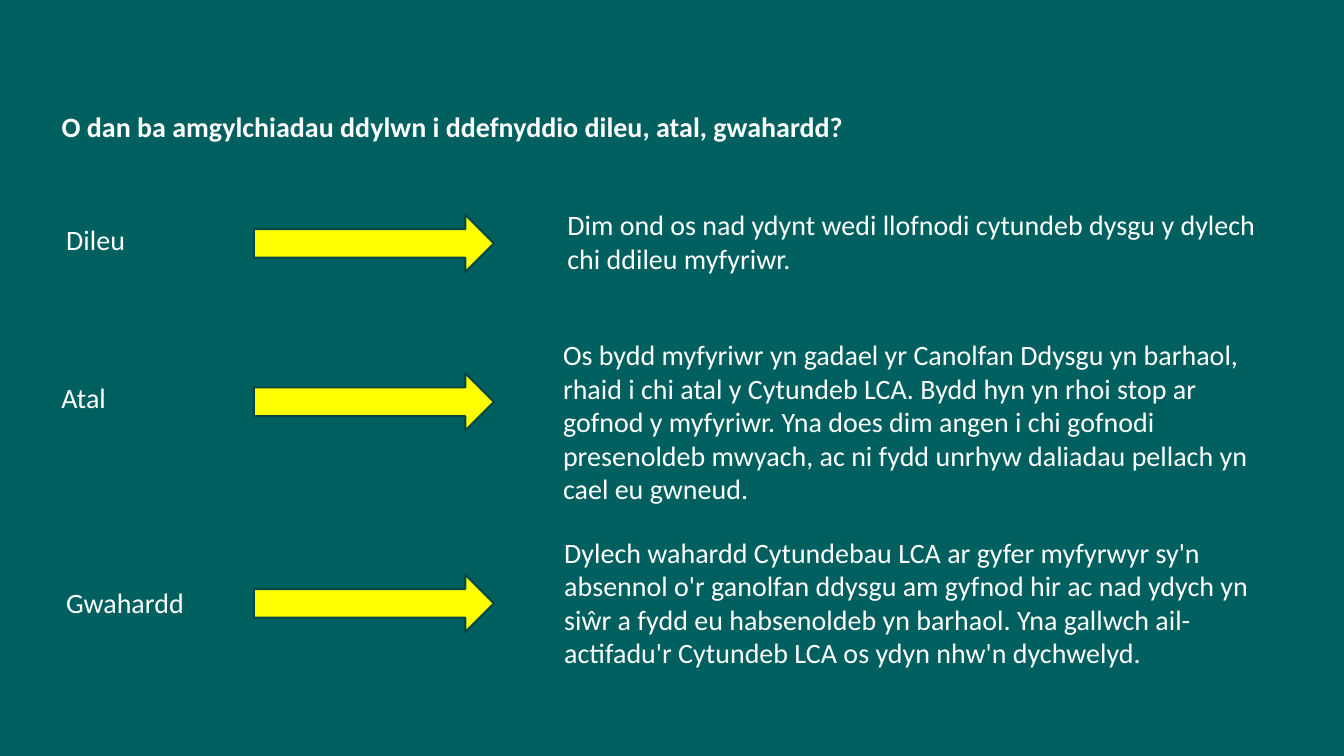
from pptx import Presentation
from pptx.dml.color import RGBColor
from pptx.enum.shapes import MSO_SHAPE
from pptx.enum.text import MSO_ANCHOR, MSO_AUTO_SIZE, PP_ALIGN
from pptx.util import Cm, Pt

RIGHT_ARROW = MSO_SHAPE.RIGHT_ARROW
TOP = MSO_ANCHOR.TOP
FIT_SHAPE = MSO_AUTO_SIZE.SHAPE_TO_FIT_TEXT
LEFT = PP_ALIGN.LEFT
TITLE_ONLY = 5

COLOURS = {
    "background": "006060",
    "text": "FFFFFF",
    "arrow": "FFFF00",
    "outline": "004747",
}

HEADING = "O dan ba amgylchiadau ddylwn i ddefnyddio dileu, atal, gwahardd?"

# Each row: label and its box, arrow top, explanation and its box (cm).
ROWS = [
    ("Dileu", (1.42, 5.49, 4.98, 1.12), 5.41,
     "Dim ond os nad ydynt wedi llofnodi cytundeb dysgu y dylech chi ddileu "
     "myfyriwr.",
     (14.05, 5.11, 17.88, 1.96)),
    ("Atal", (1.3, 9.47, 4.72, 1.12), 9.4,
     "Os bydd myfyriwr yn gadael yr Canolfan Ddysgu yn barhaol, rhaid i chi "
     "atal y Cytundeb LCA. Bydd hyn yn rhoi stop ar gofnod y myfyriwr. Yna "
     "does dim angen i chi gofnodi presenoldeb mwyach, ac ni fydd unrhyw "
     "daliadau pellach yn cael eu gwneud.",
     (13.94, 8.38, 17.96, 3.68)),
    ("Gwahardd", (1.42, 14.63, 4.72, 1.12), 14.48,
     "Dylech wahardd Cytundebau LCA ar gyfer myfyrwyr sy'n absennol o'r "
     "ganolfan ddysgu am gyfnod hir ac nad ydych yn siŵr a fydd eu "
     "habsenoldeb yn barhaol. Yna gallwch ail-actifadu'r Cytundeb LCA os "
     "ydyn nhw'n dychwelyd.",
     (13.97, 13.36, 17.96, 3.68)),
]


def colour(name):
    return RGBColor.from_string(COLOURS[name])


class SlideBuilder:
    font_name = "Calibri"
    font_size = Pt(20)

    def __init__(self, slide):
        self.slide = slide

    def background(self):
        fill = self.slide.background.fill
        fill.solid()
        fill.fore_color.rgb = colour("background")

    def add_text(self, shape, text, bold=False):
        frame = shape.text_frame
        frame.word_wrap = True
        frame.auto_size = FIT_SHAPE
        frame.vertical_anchor = TOP
        paragraph = frame.paragraphs[0]
        paragraph.alignment = LEFT
        run = paragraph.add_run()
        run.text = text
        run.font.name = self.font_name
        run.font.size = self.font_size
        run.font.bold = bold
        run.font.color.rgb = colour("text")

    def title(self, text, left, top, width, height):
        shape = self.slide.shapes.title
        shape.left, shape.top = Cm(left), Cm(top)
        shape.width, shape.height = Cm(width), Cm(height)
        self.add_text(shape, text, bold=True)

    def text_box(self, text, box):
        shape = self.slide.shapes.add_textbox(*map(Cm, box))
        self.add_text(shape, text)

    def arrow(self, left, top, width, height):
        shape = self.slide.shapes.add_shape(
            RIGHT_ARROW, Cm(left), Cm(top), Cm(width), Cm(height))
        shape.shadow.inherit = False
        shape.fill.solid()
        shape.fill.fore_color.rgb = colour("arrow")
        shape.line.color.rgb = colour("outline")
        shape.line.width = Pt(1.5)


def main():
    presentation = Presentation()
    presentation.slide_width = Cm(33.87)
    presentation.slide_height = Cm(19.05)
    layout = presentation.slide_layouts[TITLE_ONLY]
    builder = SlideBuilder(presentation.slides.add_slide(layout))

    builder.background()
    builder.title(HEADING, 1.3, 2.62, 30.61, 1.12)
    for label, label_box, arrow_top, explanation, explanation_box in ROWS:
        builder.text_box(label, label_box)
        builder.arrow(6.4, arrow_top, 6.05, 1.45)
        builder.text_box(explanation, explanation_box)

    presentation.save("out.pptx")


if __name__ == "__main__":
    main()
